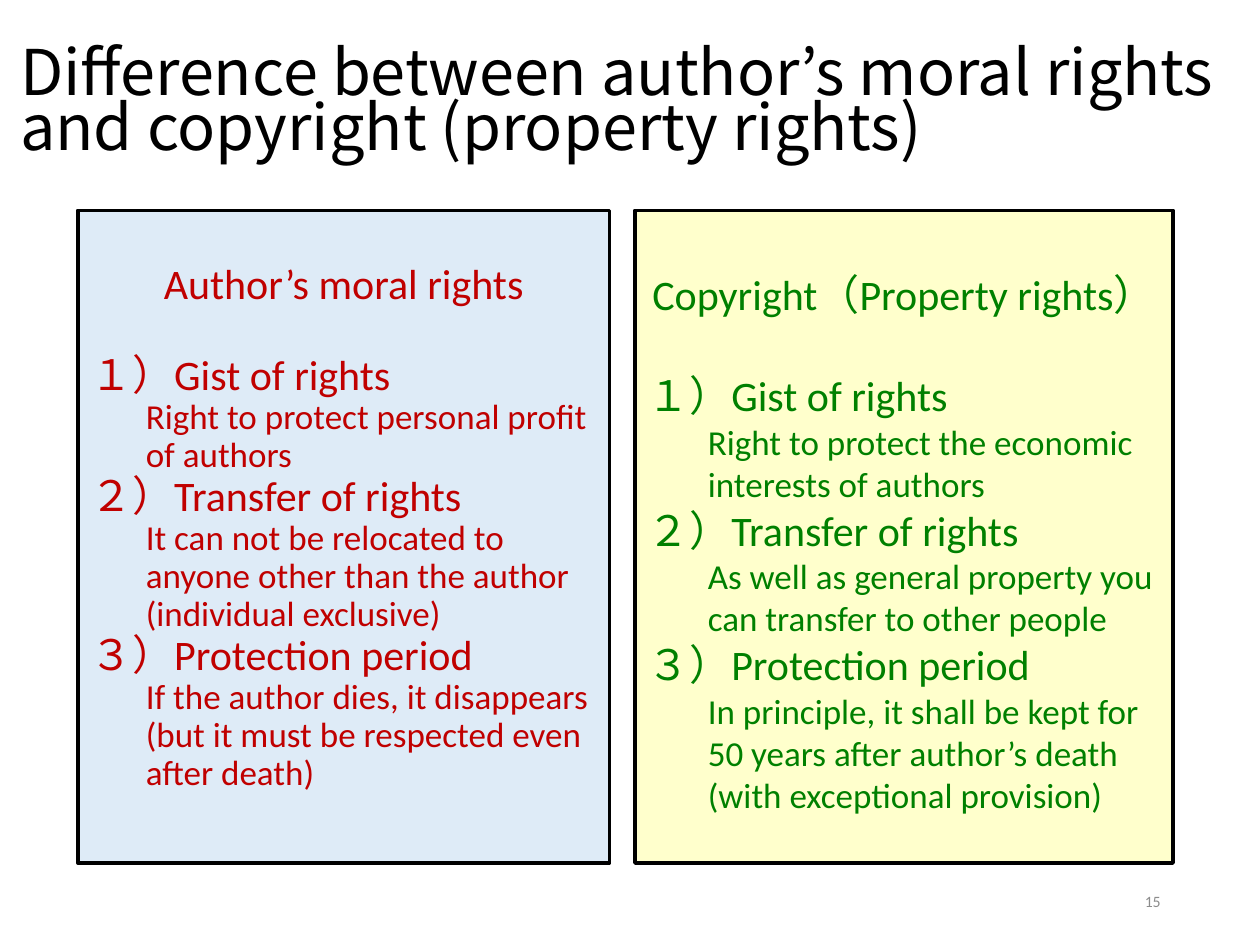
from pptx import Presentation
from pptx.dml.color import RGBColor
from pptx.enum.shapes import MSO_SHAPE
from pptx.enum.text import MSO_ANCHOR, MSO_AUTO_SIZE, PP_ALIGN
from pptx.util import Cm, Pt

RECTANGLE = MSO_SHAPE.RECTANGLE
TOP, MIDDLE = MSO_ANCHOR.TOP, MSO_ANCHOR.MIDDLE
NO_AUTOFIT = MSO_AUTO_SIZE.NONE
LEFT, CENTER, RIGHT = PP_ALIGN.LEFT, PP_ALIGN.CENTER, PP_ALIGN.RIGHT

COLORS = {
    "black": "000000",
    "gray": "8C8C8C",
    "red": "C00000",
    "green": "008000",
    "pale blue": "DEEBF7",
    "pale yellow": "FFFFCC",
}
TITLE_FONT = "Noto Sans CJK JP"
BODY_FONT = "Calibri"
TOPICS = ["１）Gist of rights", "２）Transfer of rights", "３）Protection period"]
PANELS = [
    {
        "heading": "Author’s moral rights",
        "details": [
            "Right to protect personal profit of authors",
            "It can not be relocated to anyone other than the author (individual exclusive)",
            "If the author dies, it disappears (but it must be respected even after death)",
        ],
        "left": 1.57, "width": 10.72, "fill": "pale blue", "color": "red",
        "indent": 1.12, "line_spacing": 0.9,
    },
    {
        "heading": "Copyright（Property rights）",
        "details": [
            "Right to protect the economic interests of authors",
            "As well as general property you can transfer to other people",
            "In principle, it shall be kept for 50 years after author’s death (with exceptional provision)",
        ],
        "left": 12.8, "width": 10.85, "fill": "pale yellow", "color": "green",
        "indent": 1.22, "line_spacing": 1.0,
    },
]


def write_text(paragraph, text, size=24, color="black", font=BODY_FONT,
               align=LEFT, line_spacing=1.0, space_after=0, indent=0):
    paragraph.alignment = align
    paragraph.line_spacing = line_spacing
    paragraph.space_before = Pt(0)
    paragraph.space_after = Pt(space_after)
    if indent:
        paragraph.level = 1
        properties = paragraph._p.get_or_add_pPr()
        properties.set("marL", str(Cm(indent)))
        properties.set("indent", "0")
    run = paragraph.add_run()
    run.text = text
    run.font.size = Pt(size)
    run.font.name = font
    run.font.color.rgb = RGBColor.from_string(COLORS[color])


class SlideBuilder:
    def __init__(self, presentation):
        self.slide = presentation.slides.add_slide(presentation.slide_layouts[5])

    def prepare_frame(self, shape, anchor):
        frame = shape.text_frame
        frame.word_wrap = True
        frame.auto_size = NO_AUTOFIT
        frame.vertical_anchor = anchor
        return frame

    def title(self, text, left, top, width, height):
        shape = self.slide.shapes.title
        shape.left, shape.top = Cm(left), Cm(top)
        shape.width, shape.height = Cm(width), Cm(height)
        frame = self.prepare_frame(shape, MIDDLE)
        write_text(frame.paragraphs[0], text, size=36, font=TITLE_FONT, line_spacing=0.72)

    def text_box(self, text, left, top, width, height, **text_format):
        shape = self.slide.shapes.add_textbox(Cm(left), Cm(top), Cm(width), Cm(height))
        frame = self.prepare_frame(shape, MIDDLE)
        write_text(frame.paragraphs[0], text, **text_format)

    def panel(self, heading, details, left, width, fill, color, indent, line_spacing,
              top=4.24, height=13.16):
        shape = self.slide.shapes.add_shape(RECTANGLE, Cm(left), Cm(top), Cm(width), Cm(height))
        shape.shadow.inherit = False
        shape.fill.solid()
        shape.fill.fore_color.rgb = RGBColor.from_string(COLORS[fill])
        shape.line.color.rgb = RGBColor.from_string(COLORS["black"])
        shape.line.width = Pt(2)
        frame = self.prepare_frame(shape, TOP)
        gap = 29.3 * line_spacing
        frame.margin_top = Cm(0.13) + Pt(gap)
        style = {"color": color, "line_spacing": line_spacing}
        write_text(frame.paragraphs[0], heading, align=CENTER, space_after=gap, **style)
        for topic, detail in zip(TOPICS, details):
            write_text(frame.add_paragraph(), topic, **style)
            write_text(frame.add_paragraph(), detail, size=20, indent=indent, **style)


def main():
    presentation = Presentation()
    presentation.slide_width, presentation.slide_height = Cm(25.4), Cm(19.05)
    builder = SlideBuilder(presentation)
    builder.title("Difference between author’s moral rights and copyright (property rights)",
                  0.15, 1.17, 24.8, 1.96)
    for panel in PANELS:
        builder.panel(**panel)
    builder.text_box("15", 17.93, 17.65, 5.72, 1.02, size=9, color="gray", align=RIGHT)
    presentation.save("out.pptx")


if __name__ == "__main__":
    main()
